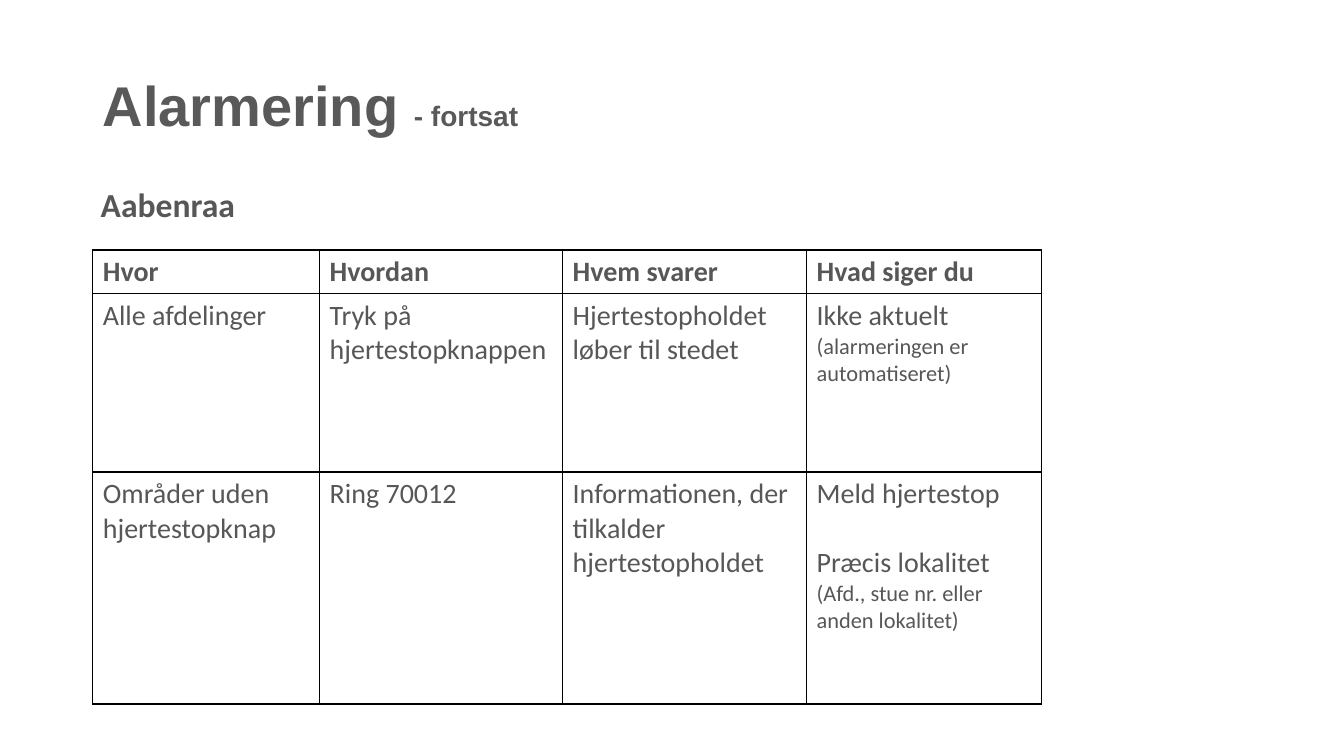
import pptx
import pptx.util
import pptx.dml.color
import pptx.enum.text
import pptx.oxml
import pptx.oxml.ns

Inches, Pt = pptx.util.Inches, pptx.util.Pt
GREY = "575757"


def style(font, name, size, color, bold):
    font.name = name
    font.size = Pt(size)
    font.bold = bold
    font.color.rgb = pptx.dml.color.RGBColor.from_string(color)


def border(cell, color, width):
    """Draw a line on all four sides of a table cell."""
    props = cell._tc.get_or_add_tcPr()
    for side in ("lnL", "lnR", "lnT", "lnB"):
        props.append(pptx.oxml.parse_xml(
            f'<a:{side} {pptx.oxml.ns.nsdecls("a")} w="{Pt(width)}">'
            f'<a:solidFill><a:srgbClr val="{color}"/></a:solidFill></a:{side}>'))


deck = pptx.Presentation()
deck.slide_width, deck.slide_height = Inches(13.33), Inches(7.5)
slide = deck.slides.add_slide(deck.slide_layouts[5])

# Title
title = slide.shapes.title
title.left, title.top = Inches(0.92), Inches(0.71)
title.width, title.height = Inches(8.97), Inches(0.73)
frame = title.text_frame
frame.auto_size = pptx.enum.text.MSO_AUTO_SIZE.NONE
frame.vertical_anchor = pptx.enum.text.MSO_ANCHOR.MIDDLE
head = frame.paragraphs[0]
head.alignment = pptx.enum.text.PP_ALIGN.LEFT
head.line_spacing = 0.9
for text, size in (("Alarmering ", 40), ("- fortsat", 20)):
    run = head.add_run()
    run.text = text
    style(run.font, "Arial", size, "595959", True)

# Town
town = slide.shapes.add_textbox(Inches(0.9), Inches(1.78), Inches(1.55), Inches(0.5))
town.text_frame.word_wrap = False
town.text_frame.text = "Aabenraa"
style(town.text_frame.paragraphs[0].font, "Calibri", 24, GREY, True)

# Each cell is a list of paragraphs, each a large text and an optional small one
rows = [
    [[("Hvor", "")], [("Hvordan", "")], [("Hvem svarer", "")], [("Hvad siger du", "")]],
    [[("Alle afdelinger", "")],
     [("Tryk på hjertestopknappen", "")],
     [("Hjertestopholdet løber til stedet", "")],
     [("Ikke aktuelt ", "(alarmeringen er automatiseret)")]],
    [[("Områder uden hjertestopknap", "")],
     [("Ring 70012", "")],
     [("Informationen, der tilkalder hjertestopholdet", "")],
     [("Meld hjertestop", ""),
      ("Præcis lokalitet\v", "(Afd., stue nr. eller anden lokalitet)")]],
]
widths = [2.25, 2.41, 2.42, 2.33]
heights = [0.43, 1.77, 2.3]

table = slide.shapes.add_table(
    len(rows), len(widths), Inches(0.92), Inches(2.48),
    Inches(sum(widths)), Inches(sum(heights))).table
table.horz_banding = False
for column, width in zip(table.columns, widths):
    column.width = Inches(width)

for r, (row, height) in enumerate(zip(rows, heights)):
    table.rows[r].height = Inches(height)
    for c, paras in enumerate(row):
        cell = table.cell(r, c)
        border(cell, "000000", 1)
        cell.fill.background()
        for i, (large, small) in enumerate(paras):
            if i == 0:
                para = cell.text_frame.paragraphs[0]
            else:
                para = cell.text_frame.add_paragraph()
                para.space_before = Pt(24.5)
            para.text = large
            style(para.font, "Calibri", 20, GREY, r == 0)
            if small:
                run = para.add_run()
                run.text = small
                run.font.size = Pt(16)

deck.save("out.pptx")
